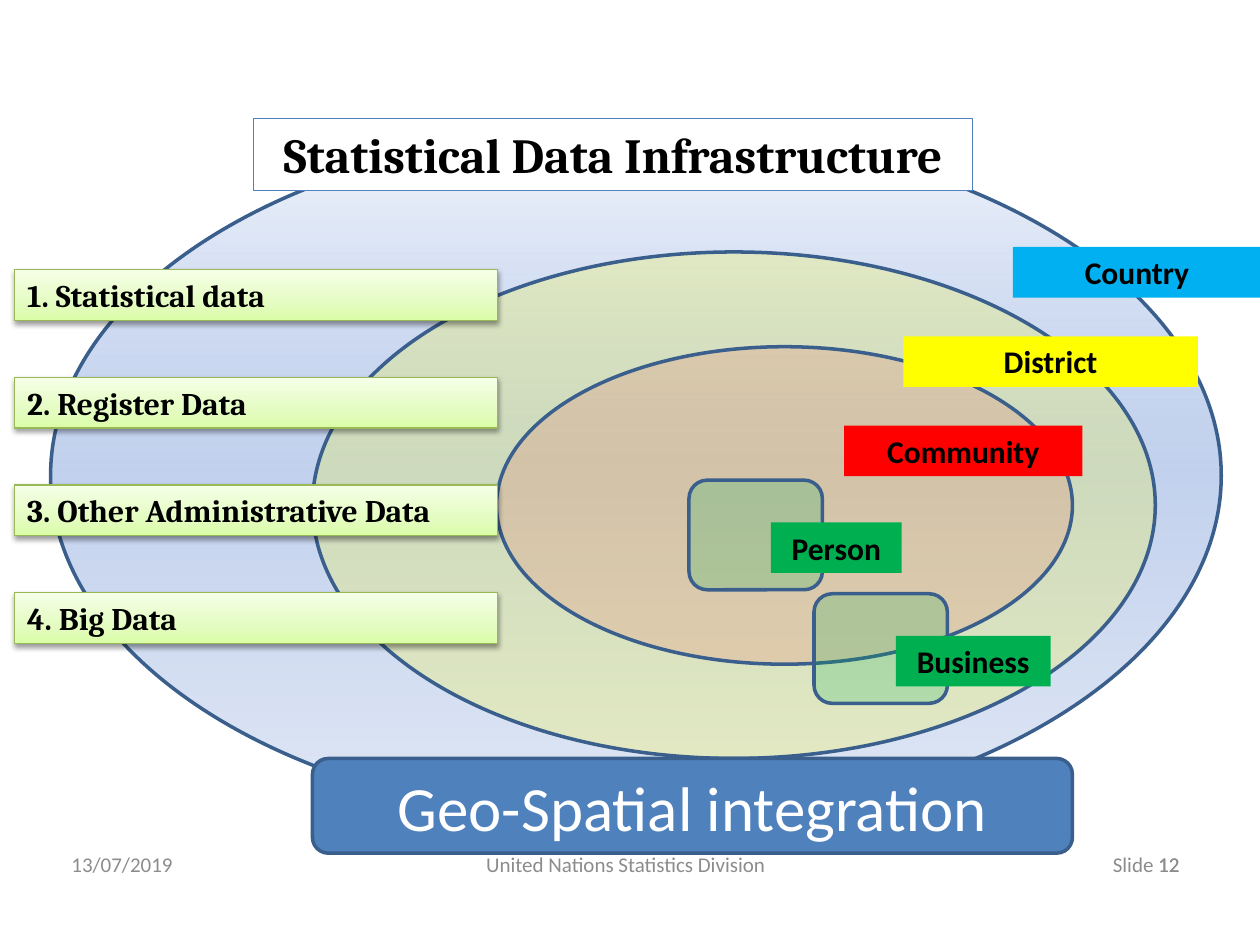
import dataclasses

import lxml.etree
import pptx
import pptx.dml.color
import pptx.enum.shapes
import pptx.enum.text
import pptx.oxml.ns
import pptx.util

Cm, Pt = pptx.util.Cm, pptx.util.Pt
RGB = pptx.dml.color.RGBColor.from_string
SHAPE = pptx.enum.shapes.MSO_SHAPE
ALIGN = pptx.enum.text.PP_ALIGN
ANCHOR = pptx.enum.text.MSO_ANCHOR
qn = pptx.oxml.ns.qn


@dataclasses.dataclass(frozen=True)
class Theme:
    body: str = "Calibri"
    serif: str = "Cambria"
    black: str = "000000"
    white: str = "FFFFFF"
    grey: str = "8C8C8C"
    blue: str = "4F81BD"
    outline: str = "3A5F8C"
    sky: str = "00B0F0"
    yellow: str = "FFFF00"
    red: str = "FF0000"
    green: str = "00B050"
    lime_edge: str = "98B955"
    # Gradient stops: position, colour, opacity (position and opacity in percent)
    country: tuple = ((0, "9AB5E4", 10), (50, "C2D1ED", 100), (100, "E1E8F5", 100))
    lime: tuple = ((0, "DAFDA7", 100), (35, "E4FCC2", 100), (100, "F5FFE7", 100))
    footer_size: int = 12
    label_size: int = 18
    title_size: int = 28
    banner_size: int = 36
    thin: float = 0.75
    thick: float = 2


def add_alpha(color, percent):
    if percent < 100:
        lxml.etree.SubElement(color, qn("a:alpha"), val=str(percent * 1000))


class Deck:
    def __init__(self, theme):
        self.theme = theme
        self.prs = pptx.Presentation()
        self.prs.slide_width, self.prs.slide_height = Cm(25.4), Cm(19.05)
        self.slide = self.prs.slides.add_slide(self.prs.slide_layouts[6])

    def text(self, s, text, size, font=None, color=None, bold=True,
             align=ALIGN.CENTER, anchor=ANCHOR.TOP):
        tf = s.text_frame
        tf.word_wrap = True
        tf.vertical_anchor = anchor
        p = tf.paragraphs[0]
        p.alignment = align
        r = p.add_run()
        r.text = text
        r.font.color.rgb = RGB(color or self.theme.black)
        values = {"name": font or self.theme.body, "size": Pt(size), "bold": bold}
        for name, value in values.items():
            setattr(r.font, name, value)

    def shape(self, kind, box, fill, line=None, width=None, opacity=100):
        s = self.slide.shapes.add_shape(kind, *map(Cm, box))
        s.shadow.inherit = False
        s.fill.solid()
        s.fill.fore_color.rgb = RGB(fill)
        add_alpha(s._element.spPr.find(".//" + qn("a:srgbClr")), opacity)
        if line:
            s.line.color.rgb = RGB(line)
            s.line.width = Pt(width or self.theme.thick)
        else:
            s.line.fill.background()
        return s

    def gradient(self, s, stops, angle):
        """Fill with the stops; the angle runs counter-clockwise."""
        s.fill.gradient()
        s.fill.gradient_angle = angle
        stop_list = s._element.spPr.find(".//" + qn("a:gsLst"))
        for old in list(stop_list):
            stop_list.remove(old)
        for position, color, opacity in stops:
            stop = lxml.etree.SubElement(stop_list, qn("a:gs"), pos=str(position * 1000))
            add_alpha(lxml.etree.SubElement(stop, qn("a:srgbClr"), val=color), opacity)

    def drop_shadow(self, s):
        effects = s._element.spPr.find(qn("a:effectLst"))
        shadow = lxml.etree.SubElement(
            effects, qn("a:outerShdw"), blurRad=str(Pt(3.1)), dist=str(Pt(1.6)),
            dir="5400000", rotWithShape="0")
        add_alpha(lxml.etree.SubElement(shadow, qn("a:srgbClr"), val=self.theme.black), 38)

    def footer(self, text, left, width, align):
        s = self.slide.shapes.add_textbox(Cm(left), Cm(16.92), Cm(width), Cm(1.02))
        self.text(s, text, self.theme.footer_size, color=self.theme.grey,
                  bold=False, align=align, anchor=ANCHOR.MIDDLE)

    def label(self, text, left, top, width, fill):
        s = self.shape(SHAPE.RECTANGLE, (left, top, width, 1.02), fill)
        self.text(s, text, self.theme.label_size)

    def unit(self, text, left, top, label_width):
        """Translucent square with its label over the lower right corner."""
        t = self.theme
        self.shape(SHAPE.ROUNDED_RECTANGLE, (left, top, 2.69, 2.21), t.green,
                   t.outline, opacity=20)
        self.label(text, left + 1.65, top + 0.85, label_width, t.green)

    def data_source(self, text, top):
        t = self.theme
        s = self.shape(SHAPE.RECTANGLE, (0.3, top, 9.73, 1.02), t.white,
                       t.lime_edge, t.thin)
        self.gradient(s, t.lime, 90)
        self.drop_shadow(s)
        self.text(s, text, t.label_size, t.serif, align=ALIGN.LEFT)


def main():
    t = Theme()
    deck = Deck(t)

    deck.footer("13/07/2019", 1.19, 5.92, ALIGN.LEFT)
    deck.footer("United Nations Statistics Division", 8.59, 8.05, ALIGN.CENTER)
    for number in ("12", "Slide 12"):
        deck.footer(number, 18.11, 5.92, ALIGN.RIGHT)

    country = deck.shape(SHAPE.OVAL, (1.02, 2.59, 23.6, 14), t.white, t.outline)
    deck.gradient(country, t.country, 270)
    deck.shape(SHAPE.OVAL, (6.3, 5.08, 16.99, 10.21), t.yellow, t.outline, opacity=20)
    deck.shape(SHAPE.OVAL, (10.01, 6.99, 11.61, 6.4), t.red, t.outline, opacity=10)

    deck.unit("Person", 13.89, 9.68, 2.64)
    deck.unit("Business", 16.41, 11.97, 3.12)
    areas = (("Country", 20.42, 5, t.sky),
             ("District", 18.21, 5.94, t.yellow),
             ("Community", 17.02, 4.8, t.red))
    for i, (text, left, width, fill) in enumerate(areas):
        deck.label(text, left, 4.98 + 1.8 * i, width, fill)

    title = deck.shape(SHAPE.RECTANGLE, (5.11, 2.39, 14.5, 1.45), t.white, t.blue, t.thin)
    deck.text(title, "Statistical Data Infrastructure", t.title_size, t.serif)

    sources = ("Statistical data", "Register Data", "Other Administrative Data", "Big Data")
    for i, text in enumerate(sources):
        deck.data_source(f"{i + 1}. {text}", 5.44 + 2.17 * i)

    banner = deck.shape(SHAPE.ROUNDED_RECTANGLE, (6.3, 15.29, 15.32, 1.91), t.blue, t.outline)
    deck.text(banner, "Geo-Spatial integration", t.banner_size, color=t.white,
              bold=False, anchor=ANCHOR.MIDDLE)

    deck.prs.save("out.pptx")


if __name__ == "__main__":
    main()
